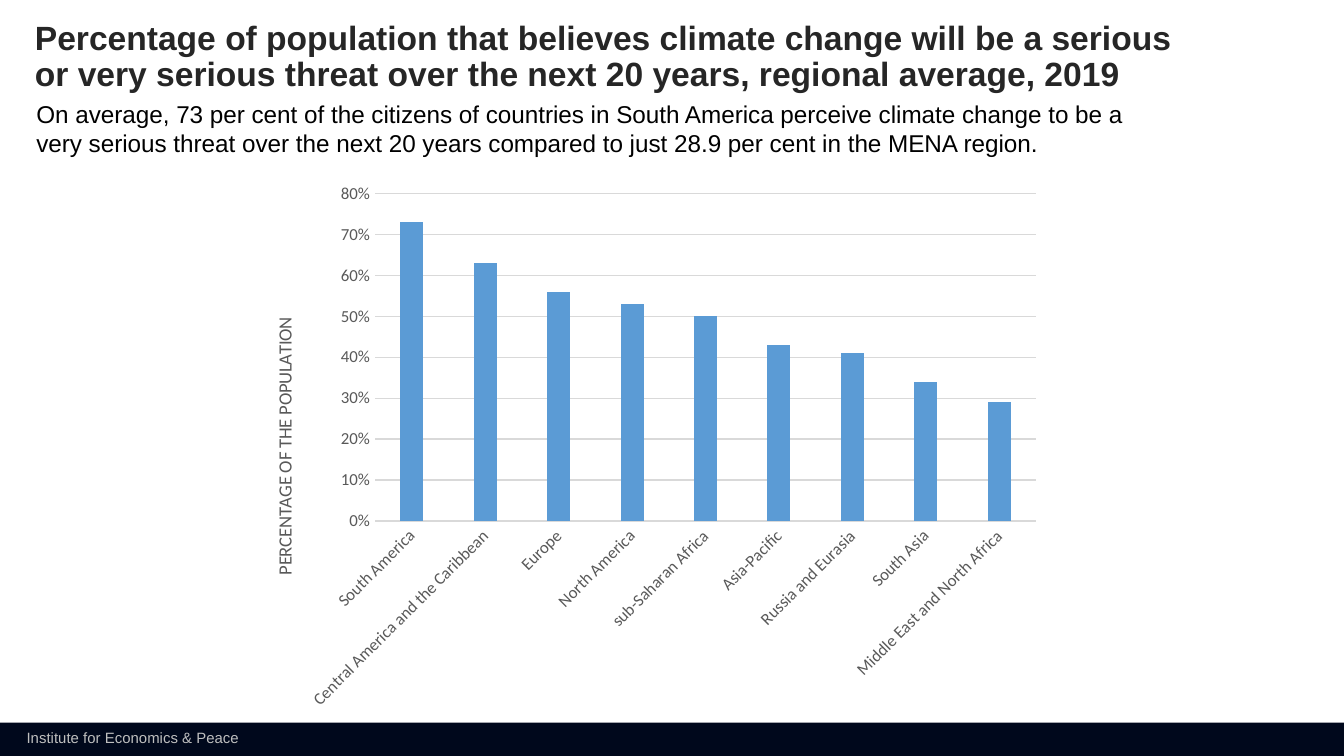
import pptx
import pptx.chart.data
import pptx.dml.color
import pptx.enum.chart
import pptx.enum.shapes
import pptx.enum.text
import pptx.oxml
import pptx.oxml.ns
import pptx.util

Pt = pptx.util.Pt
qn = pptx.oxml.ns.qn

COLORS = {
    "white": "FFFFFF",
    "navy": "00081C",
    "footer": "BFBFBF",
    "title": "262626",
    "body": "000000",
    "label": "595959",
    "grid": "D9D9D9",
    "bar": "5B9BD5",
}

REGIONS = {
    "South America": 0.73,
    "Central America and the Caribbean": 0.63,
    "Europe": 0.56,
    "North America": 0.53,
    "sub-Saharan Africa": 0.5,
    "Asia-Pacific": 0.43,
    "Russia and Eurasia": 0.41,
    "South Asia": 0.34,
    "Middle East and North Africa": 0.29,
}


def rgb(name):
    return pptx.dml.color.RGBColor.from_string(COLORS[name])


def apply(obj, values):
    for name, value in values.items():
        setattr(obj, name, value)


def format_font(font, color, **values):
    apply(font, values)
    font.color.rgb = rgb(color)


def format_line(line, color):
    line.color.rgb = rgb(color)
    line.width = Pt(0.75)


def place(sp, left, top, width, height):
    box = {"left": left, "top": top, "width": width, "height": height}
    apply(sp, {name: Pt(value) for name, value in box.items()})


def fill_text(sp, text, color, frame, para, **font):
    tf = sp.text_frame
    apply(tf, frame)
    p = tf.paragraphs[0]
    apply(p, para)
    r = p.add_run()
    r.text = text
    format_font(r.font, color, name="Arial", **font)
    return p


def remove_bullet(p):
    pPr = p._p.get_or_add_pPr()
    pPr.set("marL", "0")
    pPr.set("indent", "0")
    pPr.append(pptx.oxml.parse_xml(
        f'<a:buNone xmlns:a="{pptx.oxml.ns.nsuri("a")}"/>'))


def set_layout(parent, index, **values):
    for old in parent.findall(qn("c:layout")):
        parent.remove(old)
    items = "".join(f'<c:{name} val="{value}"/>' for name, value in values.items())
    parent.insert(index, pptx.oxml.parse_xml(
        f'<c:layout xmlns:c="{pptx.oxml.ns.nsuri("c")}">'
        f"<c:manualLayout>{items}</c:manualLayout></c:layout>"))


def add_headings(s):
    align = pptx.enum.text.PP_ALIGN.LEFT
    frame = {
        "word_wrap": True,
        "auto_size": pptx.enum.text.MSO_AUTO_SIZE.NONE,
        "vertical_anchor": pptx.enum.text.MSO_ANCHOR.TOP,
    }
    margins = ("margin_left", "margin_top", "margin_right", "margin_bottom")
    title, body = s.shapes.title, s.placeholders[1]
    place(title, 18.72, 11.52, 622.8, 21.6)
    fill_text(
        title,
        "Percentage of population that believes climate change will be a serious "
        "or very serious threat over the next 20 years, regional average, 2019",
        "title", {**frame, **dict.fromkeys(margins, 0)},
        {"alignment": align, "line_spacing": 0.9}, size=Pt(18), bold=True)
    place(body, 12.24, 49.68, 622.8, 38.88)
    p = fill_text(
        body,
        "On average, 73 per cent of the citizens of countries in South America "
        "perceive climate change to be a very serious threat over the next 20 years "
        "compared to just 28.9 per cent in the MENA region.",
        "body", frame, {"alignment": align, "space_before": Pt(0)}, size=Pt(13))
    remove_bullet(p)


def add_footer(s):
    bar = s.shapes.add_shape(pptx.enum.shapes.MSO_SHAPE.RECTANGLE,
                             0, Pt(387.2), Pt(720), Pt(17.8))
    bar.shadow.inherit = False
    bar.fill.solid()
    bar.fill.fore_color.rgb = rgb("navy")
    bar.line.fill.background()
    label = s.shapes.add_textbox(Pt(7.2), Pt(386.64), Pt(129.6), Pt(17.28))
    fill_text(label, "Institute for Economics & Peace", "footer",
              {"word_wrap": False}, {}, size=Pt(8))


def format_axis(axis):
    none = pptx.enum.chart.XL_TICK_MARK.NONE
    apply(axis, {"major_tick_mark": none, "minor_tick_mark": none})
    format_font(axis.tick_labels.font, "label", name="Calibri", size=Pt(9))


def add_region_chart(s):
    data = pptx.chart.data.CategoryChartData(number_format="0%")
    data.categories = list(REGIONS)
    data.add_series("Series 1", list(REGIONS.values()))
    chart = s.shapes.add_chart(
        pptx.enum.chart.XL_CHART_TYPE.COLUMN_CLUSTERED,
        Pt(126.72), Pt(92.16), Pt(437.04), Pt(292.32), data).chart
    apply(chart, {"has_legend": False, "has_title": False})
    format_font(chart.font, "body", name="Calibri", size=Pt(10))

    plot = chart.plots[0]
    apply(plot, {"gap_width": 219, "overlap": -27, "vary_by_categories": False})
    fill = plot.series[0].format.fill
    fill.solid()
    fill.fore_color.rgb = rgb("bar")

    regions = chart.category_axis
    format_axis(regions)
    format_line(regions.format.line, "grid")
    regions._element.find(qn("c:txPr")).find(qn("a:bodyPr")).set("rot", "-2700000")

    share = chart.value_axis
    format_axis(share)
    apply(share, {"minimum_scale": 0, "maximum_scale": 0.8, "major_unit": 0.1,
                  "has_major_gridlines": True})
    apply(share.tick_labels, {"number_format": "0%", "number_format_is_linked": False})
    share.format.line.fill.background()
    format_line(share.major_gridlines.format.line, "grid")

    title = share.axis_title
    tf = title.text_frame
    r = tf.paragraphs[0].add_run()
    r.text = "PERCENTAGE OF THE POPULATION"
    format_font(r.font, "label", name="Calibri", size=Pt(10), bold=False)
    tf._txBody.find(qn("a:bodyPr")).set("rot", "-5400000")
    set_layout(title._element, 1, xMode="edge", yMode="edge", x=0.04, y=0.26)
    set_layout(chart._chartSpace.chart.plotArea, 0, layoutTarget="inner",
               xMode="edge", yMode="edge", x=0.17, y=0.04, w=0.81, h=0.6)


def main():
    prs = pptx.Presentation()
    apply(prs, {"slide_width": Pt(720), "slide_height": Pt(405)})
    s = prs.slides.add_slide(prs.slide_layouts[1])
    s.background.fill.solid()
    s.background.fill.fore_color.rgb = rgb("white")
    add_footer(s)
    add_headings(s)
    add_region_chart(s)
    prs.save("out.pptx")


if __name__ == "__main__":
    main()
